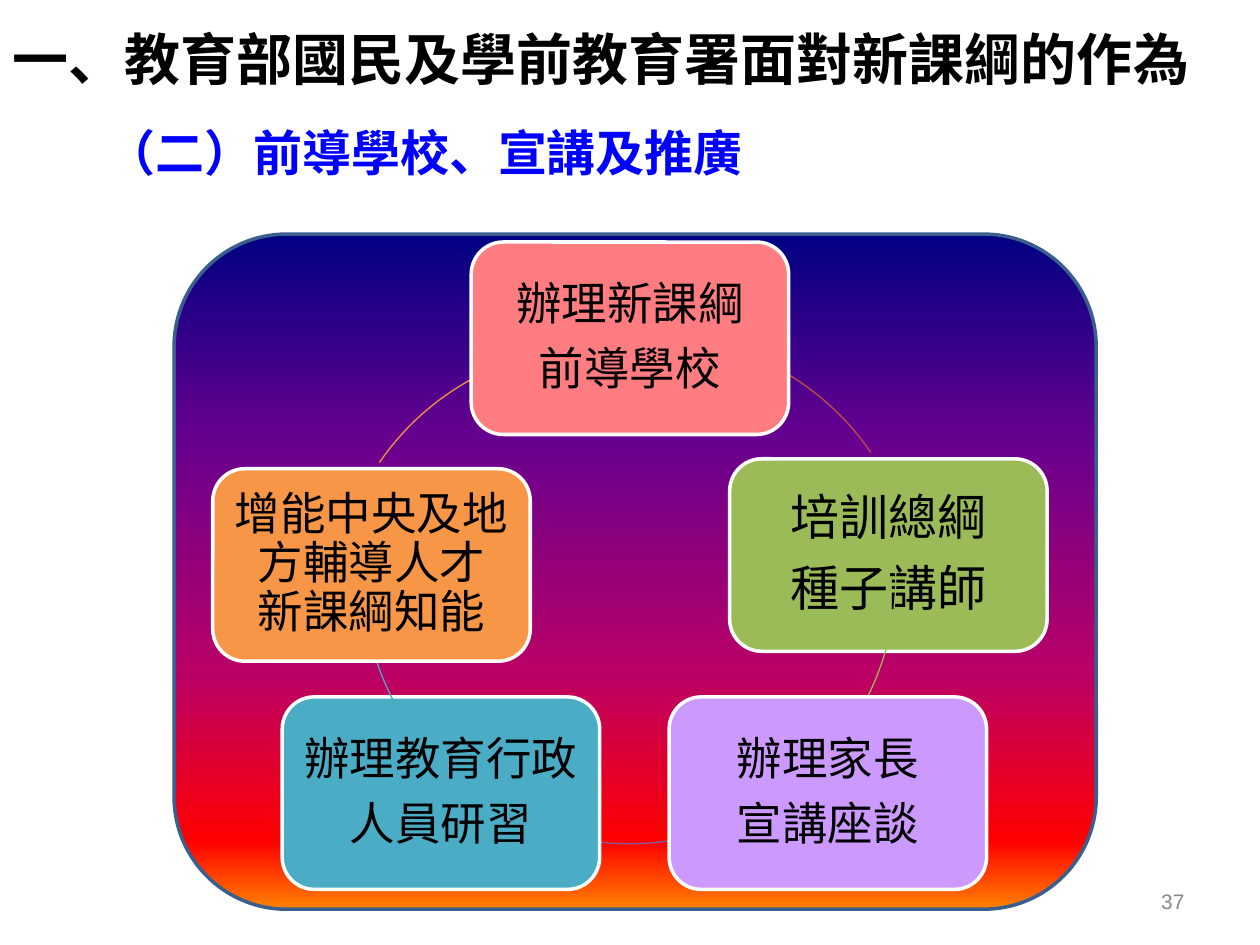
from lxml import etree
from pptx import Presentation
from pptx.dml.color import RGBColor
from pptx.enum.shapes import MSO_SHAPE
from pptx.enum.text import MSO_ANCHOR, MSO_AUTO_SIZE, PP_ALIGN
from pptx.oxml.ns import qn
from pptx.util import Cm, Pt

ROUND, ARC = MSO_SHAPE.ROUNDED_RECTANGLE, MSO_SHAPE.ARC
MIDDLE = MSO_ANCHOR.MIDDLE
LEFT, CENTER, RIGHT = PP_ALIGN.LEFT, PP_ALIGN.CENTER, PP_ALIGN.RIGHT
FIT_SHAPE, FIT_NONE = MSO_AUTO_SIZE.SHAPE_TO_FIT_TEXT, MSO_AUTO_SIZE.NONE

CJK = "Noto Sans CJK SC"
COLORS = {
    "white": "FFFFFF", "black": "000000", "blue": "0000FF", "gray": "898989",
    "panel_line": "3A5F8C", "green": "9BBB59", "teal": "4BACC6",
    "orange": "F79646", "pink": "FF7C80", "purple": "CC99FF",
    "arc_red": "BF4C48", "arc_green": "98B955", "arc_purple": "7D60A0",
    "arc_teal": "46AAC5", "arc_orange": "F69240",
}
PANEL_STOPS = [(0, "000082"), (30, "66008F"), (65, "BA0066"),
               (90, "FF0000"), (100, "FF8200")]
CARD_W, CARD_H = 6.4, 3.88
RING_SIZE = 10.74
RING_MID = (7.32, 6.27)


def rgb(name):
    """Return the named colour."""
    return RGBColor.from_string(COLORS[name])


def add_run(p, text, size, color, font=CJK, bold=False):
    """Add a formatted run to a paragraph."""
    r = p.add_run()
    r.text = text
    r.font.size, r.font.bold, r.font.name = Pt(size), bold, font
    r.font.color.rgb = rgb(color)
    etree.SubElement(r.font._element, qn("a:ea"), typeface=font)


def add_title(s, text):
    """Place and format the title placeholder."""
    sp = s.shapes.title
    sp.left, sp.top, sp.width, sp.height = Cm(0), Cm(0), Cm(25.4), Cm(2.34)
    sp.fill.solid()
    sp.fill.fore_color.rgb = rgb("white")
    tf = sp.text_frame
    tf.auto_size, tf.vertical_anchor = FIT_NONE, MIDDLE
    p = tf.paragraphs[0]
    p.alignment = LEFT
    add_run(p, text, 32, "black", bold=True)


def add_label(s, box, align, text, size, color, font=CJK, bold=False):
    """Add a one-line text box and return its text frame."""
    tf = s.shapes.add_textbox(*map(Cm, box)).text_frame
    p = tf.paragraphs[0]
    p.alignment = align
    add_run(p, text, size, color, font, bold)
    return tf


def add_shape(s, kind, box, line, width):
    """Add an outlined shape without shadow."""
    sp = s.shapes.add_shape(kind, *map(Cm, box))
    sp.shadow.inherit = False
    sp.line.color.rgb = rgb(line)
    sp.line.width = Pt(width)
    return sp


def add_panel(s):
    """Add the rounded backdrop with its vertical gradient."""
    sp = add_shape(s, ROUND, (3.51, 4.72, 18.59, 13.61), "panel_line", 2)
    sp.fill.gradient()
    sp.fill.gradient_angle = 270
    stops = sp._element.spPr.find(qn("a:gradFill")).find(qn("a:gsLst"))
    for old in list(stops):
        stops.remove(old)
    for pos, color in PANEL_STOPS:
        gs = etree.SubElement(stops, qn("a:gs"), pos=str(pos * 1000))
        etree.SubElement(gs, qn("a:srgbClr"), val=color)


def add_arc(s, color, start, end, corner=RING_MID):
    """Add a piece of the ring between two angles in degrees."""
    sp = add_shape(s, ARC, (*corner, RING_SIZE, RING_SIZE), color, 0.75)
    sp.fill.background()
    for i, angle in enumerate((start, end)):
        sp.adjustments[i] = angle * 0.6


def add_card(s, left, top, color, paragraphs, size=26):
    """Add a rounded card; a newline inside a paragraph breaks the line."""
    sp = add_shape(s, ROUND, (left, top, CARD_W, CARD_H), "white", 2)
    sp.fill.solid()
    sp.fill.fore_color.rgb = rgb(color)
    tf = sp.text_frame
    tf.word_wrap, tf.vertical_anchor = True, MIDDLE
    tf.margin_left = tf.margin_right = Cm(0.09)
    tf.margin_top = tf.margin_bottom = Cm(0.09)
    for i, text in enumerate(paragraphs):
        p = tf.add_paragraph() if i else tf.paragraphs[0]
        p.alignment, p.line_spacing = CENTER, 0.9
        p.space_after = Pt(round(size * 0.35))
        for j, line in enumerate(text.split("\n")):
            if j:
                p.add_line_break()
            add_run(p, line, size, "black")


def main():
    """Build the slide and save it."""
    prs = Presentation()
    prs.slide_width, prs.slide_height = Cm(25.4), Cm(19.05)
    s = prs.slides.add_slide(prs.slide_layouts[5])
    add_title(s, "一、教育部國民及學前教育署面對新課綱的作為")
    add_label(s, (18.21, 17.65, 5.92, 1.02), RIGHT, "37", 12, "gray",
              "Arial").vertical_anchor = MIDDLE
    tf = add_label(s, (1.9, 2.34, 13.49, 1.45), LEFT,
                   "（二）前導學校、宣講及推廣", 28, "blue", bold=True)
    tf.word_wrap, tf.auto_size = False, FIT_SHAPE
    add_panel(s)
    add_arc(s, "arc_red", 293, 325.7, (7.75, 6.78))
    add_card(s, 14.71, 9.25, "green", ["培訓總綱", "種子講師"], 28)
    add_arc(s, "arc_green", 357.1, 33.7)
    add_arc(s, "arc_purple", 78.4, 101.6)
    add_card(s, 5.69, 14.05, "teal", ["辦理教育行政", "人員研習"])
    add_arc(s, "arc_teal", 146.3, 182.9)
    add_card(s, 4.29, 9.45, "orange", ["增能中央及地方輔導人才\n新課綱知能"])
    add_arc(s, "arc_orange", 214.4, 247.1, (6.71, 6.99))
    add_card(s, 9.5, 4.88, "pink", ["辦理新課綱", "前導學校"])
    add_card(s, 13.49, 14.05, "purple", ["辦理家長", "宣講座談"])
    prs.save("out.pptx")


if __name__ == "__main__":
    main()
